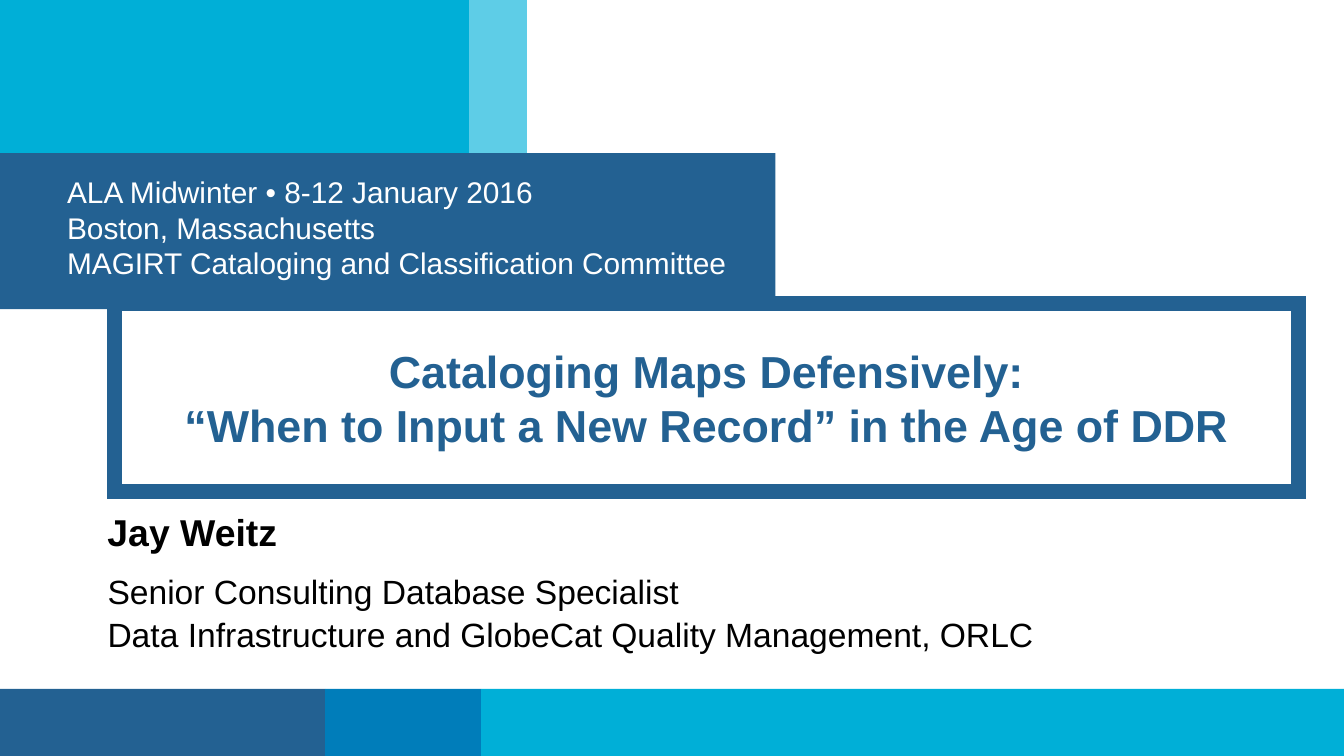
from pptx import Presentation
from pptx.dml.color import RGBColor
from pptx.enum.shapes import MSO_SHAPE
from pptx.enum.text import MSO_ANCHOR, MSO_AUTO_SIZE, PP_ALIGN
from pptx.oxml.ns import qn
from pptx.util import Inches, Pt

NAVY = RGBColor(0x23, 0x61, 0x92)
BLUE = RGBColor(0x00, 0x7D, 0xBA)
CYAN = RGBColor(0x00, 0xAF, 0xD7)
PALE_CYAN = RGBColor(0x5E, 0xCD, 0xE7)
WHITE = RGBColor(0xFF, 0xFF, 0xFF)
BLACK = RGBColor(0x00, 0x00, 0x00)

SLIDE_WIDTH = 10
SLIDE_HEIGHT = SLIDE_WIDTH * 9 / 16
STRIP_HEIGHT = 0.5


def add_block(left, top, width, height, color):
    block = slide.shapes.add_shape(
        MSO_SHAPE.RECTANGLE, Inches(left), Inches(top), Inches(width), Inches(height))
    block.shadow.inherit = False
    block.fill.solid()
    block.fill.fore_color.rgb = color
    block.line.fill.background()
    return block


def write_lines(shape, lines, size, color, margins, bold=False,
                align=PP_ALIGN.LEFT, anchor=MSO_ANCHOR.TOP, before=0, spacing=1.0):
    """Fill a shape with one paragraph per line; margins are left, top, right, bottom."""
    frame = shape.text_frame
    frame.word_wrap = True
    frame.auto_size = MSO_AUTO_SIZE.NONE
    frame.vertical_anchor = anchor
    (frame.margin_left, frame.margin_top,
     frame.margin_right, frame.margin_bottom) = [Inches(margin) for margin in margins]
    for index, line in enumerate(lines):
        paragraph = frame.add_paragraph() if index else frame.paragraphs[0]
        paragraph.alignment = align
        paragraph.space_before = Pt(before)
        paragraph.line_spacing = spacing
        run = paragraph.add_run()
        run.text = line
        run.font.name = "Arial"
        run.font.size = Pt(size)
        run.font.bold = bold
        run.font.color.rgb = color


presentation = Presentation()
presentation.slide_width = Inches(SLIDE_WIDTH)
presentation.slide_height = Inches(SLIDE_HEIGHT)
slide = presentation.slides.add_slide(presentation.slide_layouts[1])

# Footer strip and top blocks
left = 0
for width, color in [(2.42, NAVY), (1.16, BLUE), (6.42, CYAN)]:
    add_block(left, SLIDE_HEIGHT - STRIP_HEIGHT, width, STRIP_HEIGHT, color)
    left += width
add_block(0, 0, 3.49, 1.16, CYAN)
add_block(3.49, 0, 0.43, 1.16, PALE_CYAN)

# Event band
event_band = add_block(0, 1.14, 5.77, 1.16, NAVY)
write_lines(event_band,
            ["ALA Midwinter • 8-12 January 2016",
             "Boston, Massachusetts",
             "MAGIRT Cataloging and Classification Committee"],
            16, WHITE, (0.5, 0.15, 0.3, 0.2))

# Framed title with square corners
title = slide.shapes.title
title.left, title.top = Inches(0.85), Inches(2.26)
title.width, title.height = Inches(8.81), Inches(1.4)
title.line.color.rgb = NAVY
title.line.width = Pt(8)
outline = title._element.spPr.find(qn("a:ln"))
outline.append(outline.makeelement(qn("a:miter"), {"lim": "800000"}))
write_lines(title,
            ["Cataloging Maps Defensively:",
             "“When to Input a New Record” in the Age of DDR"],
            24, NAVY, (0.5, 0.3, 0.5, 0.3), bold=True,
            align=PP_ALIGN.CENTER, anchor=MSO_ANCHOR.MIDDLE)

# Speaker
speaker = slide.shapes.add_textbox(Inches(0.8), Inches(3.74), Inches(2.03), Inches(0.44))
write_lines(speaker, ["Jay Weitz"], 20, BLACK, (0, 0.05, 0.1, 0.05), bold=True, before=4)

role = slide.placeholders[1]
role.left, role.top = Inches(0.8), Inches(4.28)
role.width, role.height = Inches(7.12), Inches(0.75)
write_lines(role,
            ["Senior Consulting Database Specialist",
             "Data Infrastructure and GlobeCat Quality Management, ORLC"],
            18, BLACK, (0, 0, 0.1, 0.05), before=3.6, spacing=0.9)
for paragraph in role.text_frame.paragraphs:
    properties = paragraph._p.get_or_add_pPr()
    properties.set("marL", "0")
    properties.set("indent", "0")
    properties.append(properties.makeelement(qn("a:buNone"), {}))

presentation.save("out.pptx")
